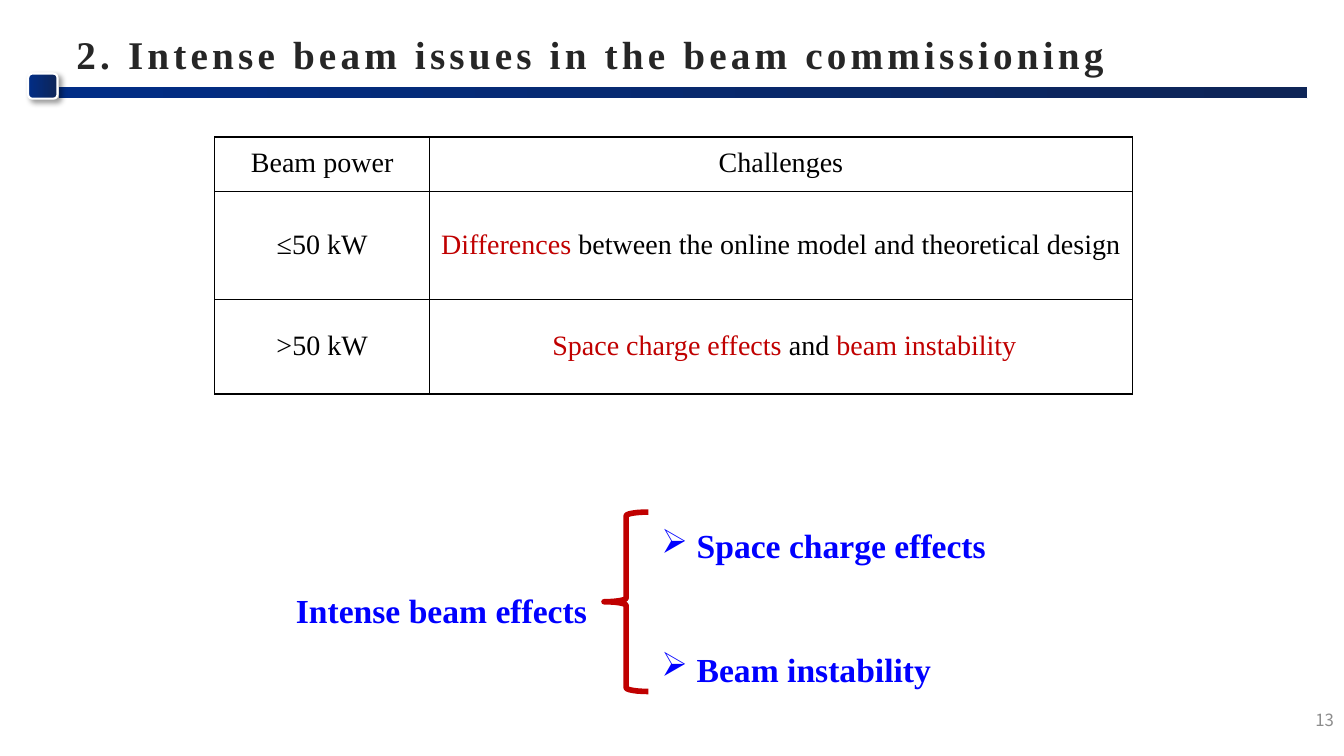
from dataclasses import dataclass

from lxml.etree import SubElement
from pptx import Presentation
from pptx.dml.color import RGBColor
from pptx.enum.shapes import MSO_SHAPE as Preset
from pptx.enum.text import MSO_ANCHOR as Anchor, PP_ALIGN as Align
from pptx.oxml import parse_xml
from pptx.oxml.ns import nsdecls, qn
from pptx.util import Inches, Pt


@dataclass(frozen=True)
class Theme:
    serif: str = "Times New Roman"
    sans: str = "Noto Sans CJK SC"
    title: str = "262626"
    ink: str = "000000"
    alert: str = "C00000"
    accent: str = "0000FF"
    muted: str = "8C8C8C"
    edge: str = "FFFFFF"
    band: tuple = ("012D86", "0E2557")
    title_size: int = 28
    point_size: int = 24
    table_size: int = 20
    page_size: int = 12


THEME = Theme()


def write(paragraph, text, *, size, color, font=THEME.serif, bold=False, tracking=0):
    run = paragraph.add_run()
    run.text = text
    run.font.name, run.font.size, run.font.bold = font, Pt(size), bold
    run.font.color.rgb = RGBColor.from_string(color)
    props = run.font._element
    if tracking:
        props.set("spc", str(tracking * 100))
    SubElement(props, qn("a:ea")).set("typeface", font)


class SlideBuilder:
    """Draws elements on one slide, with lengths in percent of its size."""

    def __init__(self, deck, theme):
        self.deck, self.theme = deck, theme
        self.slide = deck.slides.add_slide(deck.slide_layouts[6])

    def across(self, share):
        return round(self.deck.slide_width * share / 100)

    def down(self, share):
        return round(self.deck.slide_height * share / 100)

    def place(self, left, top, width, height):
        return self.across(left), self.down(top), self.across(width), self.down(height)

    def shape(self, preset, place, line, weight, gradient=None, shadow=False):
        item = self.slide.shapes.add_shape(preset, *self.place(*place))
        item.shadow.inherit = False
        if gradient:
            item.fill.gradient()
            item.fill.gradient_angle = 0
            for stop, color in zip(item.fill.gradient_stops, gradient):
                stop.color.rgb = RGBColor.from_string(color)
        else:
            item.fill.background()
        item.line.color.rgb = RGBColor.from_string(line)
        item.line.width = Pt(weight)
        if shadow:
            effects = item._element.spPr.find(qn("a:effectLst"))
            effects.append(parse_xml(
                f'<a:outerShdw {nsdecls("a")} blurRad="{Pt(4)}" dist="{Pt(3)}" '
                'dir="2700000" algn="tl" rotWithShape="0"><a:srgbClr val="000000">'
                '<a:alpha val="40000"/></a:srgbClr></a:outerShdw>'))

    def text(self, place, lines, *, align=Align.LEFT, anchor=Anchor.TOP, spacing=1.0,
             gap=0, bullet=None, inset=(0.1, 0.05), **style):
        frame = self.slide.shapes.add_textbox(*self.place(*place)).text_frame
        frame.word_wrap, frame.vertical_anchor = True, anchor
        frame.margin_left = frame.margin_right = Inches(inset[0])
        frame.margin_top = frame.margin_bottom = Inches(inset[1])
        for index, line in enumerate(lines):
            paragraph = frame.add_paragraph() if index else frame.paragraphs[0]
            paragraph.alignment, paragraph.line_spacing = align, spacing
            if index and gap:
                paragraph.space_before = Pt(gap)
            if bullet:
                props = paragraph._p.get_or_add_pPr()
                props.set("marL", str(Inches(0.35)))
                props.set("indent", str(-Inches(0.35)))
                SubElement(props, qn("a:buChar")).set("char", bullet)
            write(paragraph, line, **style)

    def table(self, left, top, columns, rows, content):
        place = self.place(left, top, sum(columns), sum(rows))
        grid = self.slide.shapes.add_table(len(rows), len(columns), *place).table
        grid.first_row = grid.horz_banding = False
        for column, share in zip(grid.columns, columns):
            column.width = self.across(share)
        for row, share, entries in zip(grid.rows, rows, content):
            row.height = self.down(share)
            for cell, pieces in zip(row.cells, entries):
                self.cell(cell, pieces)

    def cell(self, cell, pieces):
        props = cell._tc.get_or_add_tcPr()
        for side in ("lnL", "lnR", "lnT", "lnB"):
            props.append(parse_xml(
                f'<a:{side} {nsdecls("a")} w="{Pt(1)}"><a:solidFill><a:srgbClr '
                f'val="{self.theme.ink}"/></a:solidFill></a:{side}>'))
        cell.fill.background()
        cell.vertical_anchor = Anchor.MIDDLE
        paragraph = cell.text_frame.paragraphs[0]
        paragraph.alignment, paragraph.line_spacing = Align.CENTER, 0.93
        for text, color in pieces:
            write(paragraph, text, size=self.theme.table_size, color=color)


def main():
    deck = Presentation()
    deck.slide_width, deck.slide_height = Inches(13.33), Inches(7.5)
    theme = THEME
    page = SlideBuilder(deck, theme)

    page.shape(Preset.RECTANGLE, (4.35, 11.47, 92.95, 1.6), theme.edge, 1, theme.band)
    page.shape(Preset.ROUNDED_RECTANGLE, (2.1, 9.73, 2.18, 3.33), theme.edge, 1.5,
               theme.band, shadow=True)
    page.text((4.95, 2.4, 84, 9.47), ["2. Intense beam issues in the beam commissioning"],
              anchor=Anchor.MIDDLE, size=theme.title_size, color=theme.title,
              bold=True, tracking=3)

    ink, alert = theme.ink, theme.alert
    challenges = [
        [[("Beam power", ink)], [("Challenges", ink)]],
        [[("≤50 kW", ink)],
         [("Differences ", alert),
          ("between the online model and theoretical design", ink)]],
        [[(">50 kW", ink)],
         [(" Space charge effects ", alert), ("and ", ink), ("beam instability", alert)]],
    ]
    page.table(15.98, 18.13, (15.98, 52.29), (7.2, 14.27, 12.53), challenges)

    point = dict(size=theme.point_size, color=theme.accent, bold=True)
    page.text((48.31, 66, 37.88, 29.6), ["Space charge effects", "Beam instability"],
              align=Align.JUSTIFY, spacing=1.5, gap=45, bullet="➢",
              inset=(0.12, 0.06), **point)
    page.text((19.35, 74.93, 27, 9.47), ["Intense beam effects"], align=Align.CENTER,
              spacing=1.4, inset=(0.13, 0.07), **point)
    page.shape(Preset.LEFT_BRACE, (44.94, 67.73, 3.3, 23.73), alert, 4)

    page.text((97, 93.2, 3, 4.67), ["13"], align=Align.RIGHT, size=theme.page_size,
              color=theme.muted, font=theme.sans)
    deck.save("out.pptx")


if __name__ == "__main__":
    main()
